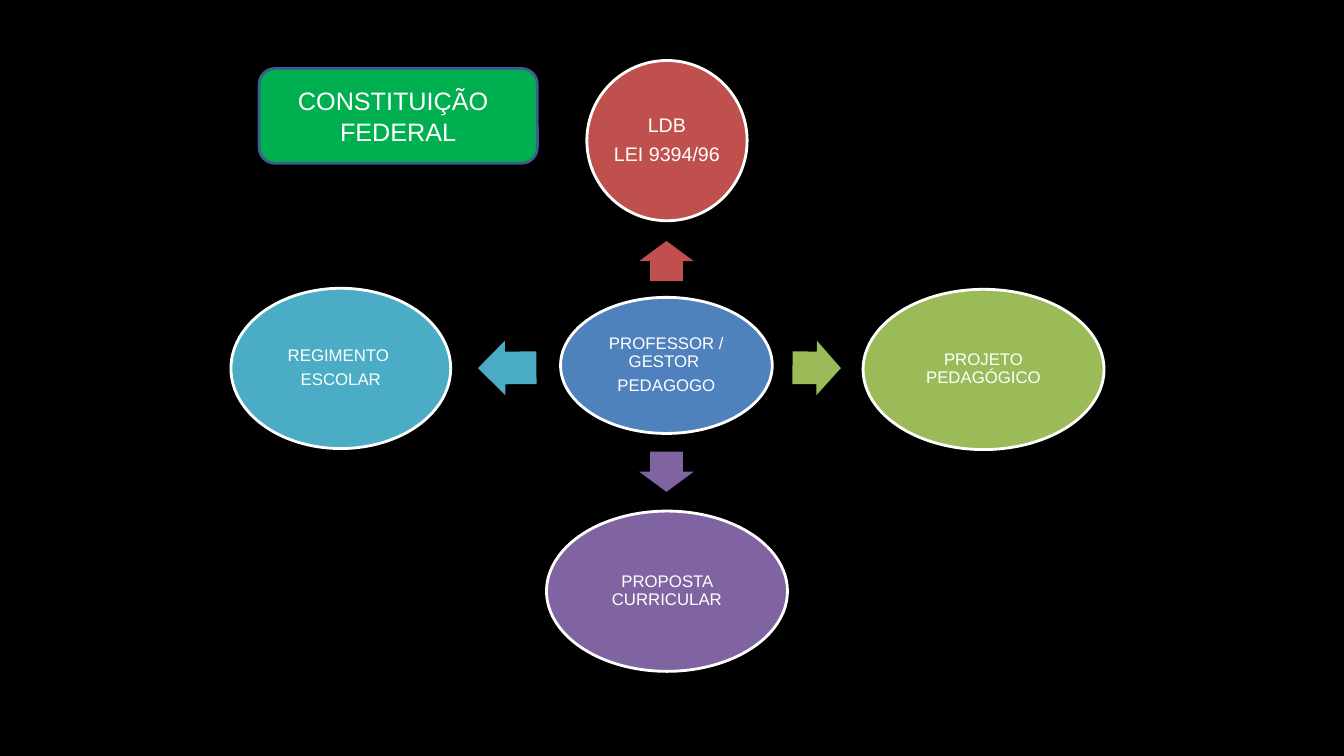
import dataclasses
import typing

import pptx
import pptx.dml.color
import pptx.enum.shapes
import pptx.enum.text
import pptx.util

SCALE = 9144
KIND = pptx.enum.shapes.MSO_SHAPE
ALIGN = pptx.enum.text.PP_ALIGN


@dataclasses.dataclass(frozen=True)
class Theme:
    font: str = "Arial"
    back: str = "000000"
    text: str = "FFFFFF"
    rim: str = "FFFFFF"
    edge: str = "3A5F8C"
    blue: str = "4F81BD"
    red: str = "C0504D"
    olive: str = "9BBB59"
    plum: str = "8064A2"
    teal: str = "4BACC6"
    green: str = "00B050"
    small: int = 12
    mid: int = 14
    large: int = 18
    line: int = 2


THEME = Theme()


@dataclasses.dataclass(frozen=True)
class Box:
    left: int
    top: int
    width: int
    height: int


@dataclasses.dataclass(frozen=True)
class Node:
    box: Box
    fill: str
    lines: tuple[str, ...]
    size: int = THEME.small


@dataclasses.dataclass(frozen=True)
class Arrow:
    box: Box
    fill: str
    turn: float


NODES = (
    Node(Box(556, 295, 210, 135), THEME.blue, ("PROFESSOR / GESTOR ", "PEDAGOGO")),
    Node(Box(582, 60, 159, 159), THEME.red, ("LDB", "LEI 9394/96"), THEME.mid),
    Node(Box(856, 287, 239, 159), THEME.olive, ("PROJETO PEDAGÓGICO",)),
    Node(Box(542, 507, 239, 159), THEME.plum, ("PROPOSTA CURRICULAR",)),
    Node(Box(229, 286, 218, 159), THEME.teal, ("REGIMENTO ", "ESCOLAR")),
)

ARROWS = (
    Arrow(Box(641, 232, 40, 54), THEME.red, 270),
    Arrow(Box(786, 338, 48, 54), THEME.olive, 0.5),
    Arrow(Box(641, 441, 40, 54), THEME.plum, 90),
    Arrow(Box(474, 338, 58, 54), THEME.teal, 179.5),
)


def px(count: int) -> pptx.util.Emu:
    return pptx.util.Emu(count * SCALE)


def tint(code: str) -> pptx.dml.color.RGBColor:
    return pptx.dml.color.RGBColor.from_string(code)


def draw(slide: typing.Any, kind: KIND, box: Box, fill: str, rim: str = "") -> typing.Any:
    shape = slide.shapes.add_shape(
        kind, px(box.left), px(box.top), px(box.width), px(box.height)
    )
    shape.shadow.inherit = False
    shape.fill.solid()
    shape.fill.fore_color.rgb = tint(fill)
    if rim:
        shape.line.color.rgb = tint(rim)
        shape.line.width = pptx.util.Pt(THEME.line)
    else:
        shape.line.fill.background()
    return shape


def write(
    shape: typing.Any,
    lines: tuple[str, ...],
    *,
    size: int,
    side: int = 2,
    edge: int = 2,
    pitch: float = 1.0,
    after: float = 0,
    first: ALIGN = ALIGN.CENTER,
) -> None:
    frame = shape.text_frame
    frame.word_wrap = True
    frame.vertical_anchor = pptx.enum.text.MSO_ANCHOR.MIDDLE
    frame.margin_left = frame.margin_right = px(side)
    frame.margin_top = frame.margin_bottom = px(edge)
    for rank, line in enumerate(lines):
        para = frame.add_paragraph() if rank else frame.paragraphs[0]
        para.alignment = ALIGN.CENTER if rank else first
        para.line_spacing = pitch
        para.space_after = pptx.util.Pt(after)
        run = para.add_run()
        run.text = line
        run.font.name = THEME.font
        run.font.size = pptx.util.Pt(size)
        run.font.color.rgb = tint(THEME.text)


def place(slide: typing.Any, node: Node) -> None:
    shape = draw(slide, KIND.OVAL, node.box, node.fill, THEME.rim)
    write(shape, node.lines, size=node.size, pitch=0.9, after=round(node.size * 0.35, 1))


def point(slide: typing.Any, arrow: Arrow) -> None:
    shape = draw(slide, KIND.RIGHT_ARROW, arrow.box, arrow.fill)
    shape.adjustments[0] = 0.6
    shape.adjustments[1] = 0.5
    shape.rotation = arrow.turn


def main() -> None:
    deck = pptx.Presentation()
    deck.slide_width = px(1333)
    deck.slide_height = px(750)
    slide = deck.slides.add_slide(deck.slide_layouts[6])
    slide.background.fill.solid()
    slide.background.fill.fore_color.rgb = tint(THEME.back)
    for node in NODES:
        place(slide, node)
    for arrow in ARROWS:
        point(slide, arrow)
    law = draw(slide, KIND.ROUNDED_RECTANGLE, Box(257, 68, 276, 94), THEME.green, THEME.edge)
    write(
        law,
        ("CONSTITUIÇÃO", "FEDERAL"),
        size=THEME.large,
        side=34,
        edge=5,
        first=ALIGN.LEFT,
    )
    deck.save("out.pptx")


if __name__ == "__main__":
    main()
